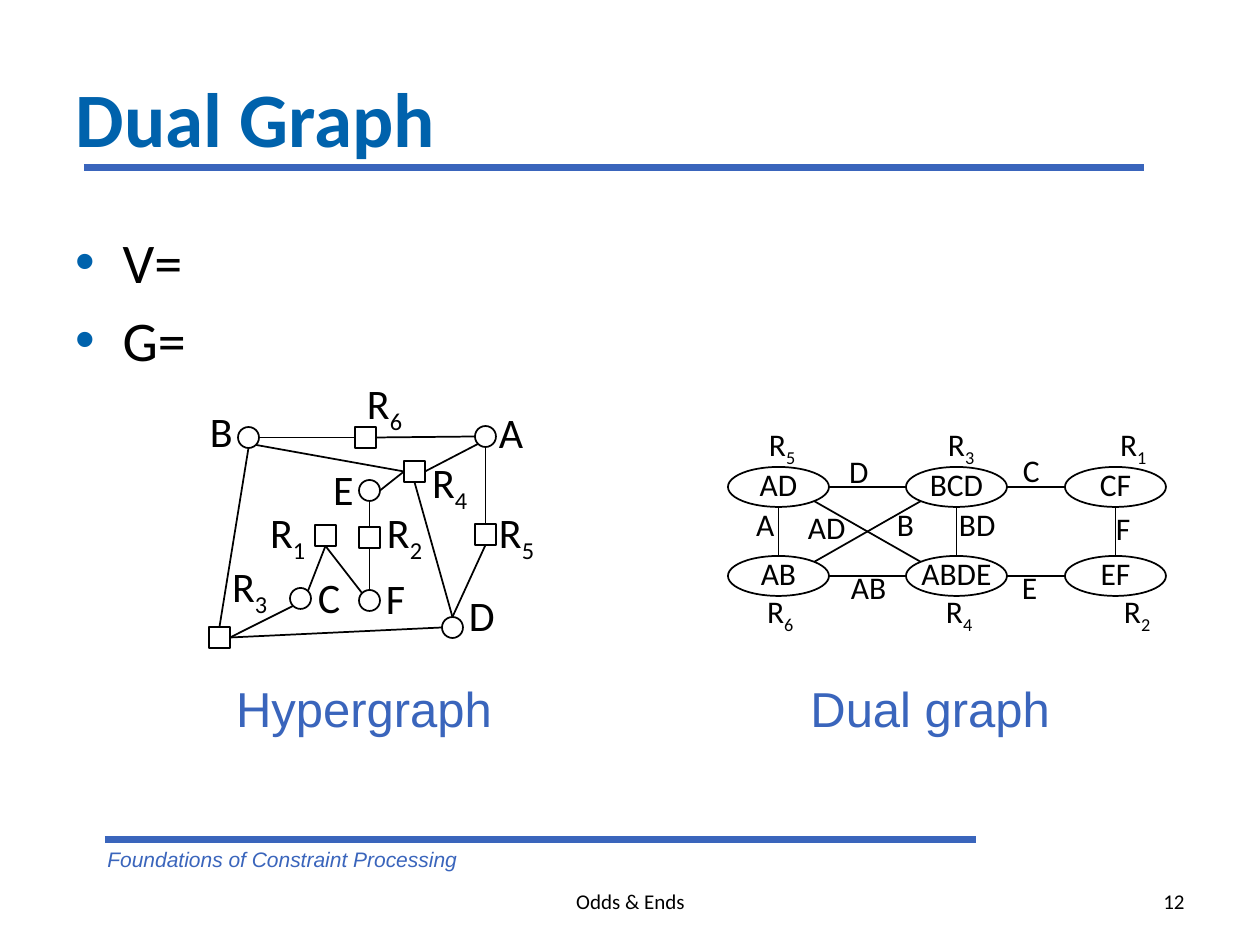
from lxml import etree
from pptx import Presentation
from pptx.dml.color import RGBColor
from pptx.enum.shapes import MSO_CONNECTOR, MSO_SHAPE
from pptx.enum.text import MSO_ANCHOR, MSO_AUTO_SIZE, PP_ALIGN
from pptx.oxml.ns import qn
from pptx.util import Emu, Pt

OVAL, RECT = MSO_SHAPE.OVAL, MSO_SHAPE.RECTANGLE
STRAIGHT = MSO_CONNECTOR.STRAIGHT
LEFT, CENTER, RIGHT = PP_ALIGN.LEFT, PP_ALIGN.CENTER, PP_ALIGN.RIGHT
TOP, MIDDLE = MSO_ANCHOR.TOP, MSO_ANCHOR.MIDDLE
PX = 914400 / 126
COLORS = {"title": "0062AC", "accent": "3A65BC", "ink": "000000", "paper": "FFFFFF"}

TITLE = ("Dual Graph", (63, 38, 1134, 158))
BULLETS = (["V=", "G="], (63, 221, 1134, 624))
RULES = [((84, 168), (1144, 168)), ((105, 840), (976, 840))]
# text, box, alignment, anchor, font
CAPTIONS = [
    ("Foundations of Constraint Processing", (95, 840, 661, 38), LEFT, TOP,
     {"size": Pt(12), "name": "Arial", "color": "accent", "italic": True}),
    ("Odds & Ends", (431, 876, 399, 50), CENTER, MIDDLE, {"size": Pt(12)}),
    ("12", (903, 876, 294, 50), RIGHT, MIDDLE, {"size": Pt(12)}),
    ("Hypergraph", (136, 672, 456, 72), CENTER, TOP,
     {"size": Pt(28), "name": "Arial", "color": "accent"}),
    ("Dual graph", (798, 672, 421, 72), LEFT, TOP,
     {"size": Pt(28), "name": "Arial", "color": "accent"}),
]

# Hypergraph: node -> (node corner, label corner); relations R1 to R6 are squares
NODE = 21
HYPER_NODES = {
    "A": ((475, 426), (499, 407)), "B": ((238, 427), (210, 406)),
    "C": ((290, 588), (318, 572)), "D": ((442, 617), (469, 590)),
    "E": ((359, 480), (333, 464)), "F": ((359, 590), (386, 573)),
    "R1": ((315, 525), (270, 507)), "R2": ((359, 527), (387, 507)),
    "R3": ((209, 627), (232, 561)), "R4": ((404, 461), (432, 457)),
    "R5": ((475, 524), (499, 507)), "R6": ((355, 427), (367, 378)),
}
HYPER_EDGES = [
    ("R6", "left", "B", "right"), ("R6", "right", "A", "left"),
    ("R4", "left", "B", "bottom right"), ("R4", "right", "A", "bottom left"),
    ("R4", "left", "E", "right"), ("R4", "bottom", "D", "top"),
    ("R5", "top", "A", "bottom"), ("R5", "bottom", "D", "top"),
    ("R3", "top", "B", "bottom"), ("R3", "right", "C", "bottom left"),
    ("R3", "right", "D", "left"), ("R1", "bottom", "C", "top right"),
    ("R1", "bottom", "F", "top left"), ("R2", "bottom", "F", "top"),
    ("R2", "top", "E", "bottom"),
]

# Dual graph: scopes on a grid, relation names around it, shared variables on edges
DUAL_GRID = [["AD", "BCD", "CF"], ["AB", "ABDE", "EF"]]
DUAL_COLUMNS, DUAL_ROWS, DUAL_SIZE = (728, 906, 1065), (467, 556), (101, 40)
DUAL_EDGES = [
    ("AD", "right", "BCD", "left"), ("BCD", "right", "CF", "left"),
    ("AB", "right", "ABDE", "left"), ("ABDE", "right", "EF", "left"),
    ("AD", "bottom", "AB", "top"), ("BCD", "bottom", "ABDE", "top"),
    ("CF", "bottom", "EF", "top"), ("AB", "top right", "BCD", "bottom left"),
    ("AD", "bottom right", "ABDE", "top left"),
]
DUAL_LABELS = [
    ("R5", 769, 425), ("R3", 948, 425), ("R1", 1120, 425),
    ("R6", 767, 592), ("R4", 946, 592), ("R2", 1124, 592),
    ("D", 849, 452), ("C", 1023, 451), ("A", 756, 505), ("AD", 808, 508),
    ("B", 897, 505), ("BD", 959, 505), ("F", 1116, 509), ("AB", 851, 568), ("E", 1022, 568),
]

SIDES = {"top": (0, -1), "left": (-1, 0), "bottom": (0, 1), "right": (1, 0)}
SITES = list(SIDES)


def px(*lengths):
    return [Emu(round(length * PX)) for length in lengths]


def rgb(name):
    return RGBColor.from_string(COLORS[name])


def set_font(font, **values):
    values = {"name": "Calibri", "color": "ink", **values}
    font.color.rgb = rgb(values.pop("color"))
    for key, value in values.items():
        setattr(font, key, value)


def format_frame(frame, **values):
    for key, value in {"word_wrap": True, "auto_size": MSO_AUTO_SIZE.NONE, **values}.items():
        setattr(frame, key, value)


def add_text(shapes, text, box, align=LEFT, anchor=TOP, font=None, **frame_values):
    frame = shapes.add_textbox(*px(*box)).text_frame
    format_frame(frame, vertical_anchor=anchor, **frame_values)
    paragraph = frame.paragraphs[0]
    paragraph.alignment = align
    set_font(paragraph.font, **(font or {}))
    run = paragraph.add_run()
    run.text = text
    set_font(run.font, **(font or {}))
    return paragraph


def add_label(shapes, text, corner, size):
    """Add a margin-free label; the digit of a relation name is a subscript."""
    font = {"size": Pt(size)}
    paragraph = add_text(shapes, text[0], (*corner, 56, size * 2.1), font=font,
                         margin_left=0, margin_top=0, margin_right=0, margin_bottom=0)
    if text[1:]:
        run = paragraph.add_run()
        run.text = text[1:]
        set_font(run.font, **font)
        if text[1:].isdigit():
            run.font._element.set("baseline", "-25000")


def add_node(shapes, kind, box):
    node = shapes.add_shape(kind, *px(*box))
    node.shadow.inherit = False
    node.fill.solid()
    node.fill.fore_color.rgb = rgb("paper")
    node.line.color.rgb = rgb("ink")
    node.line.width = Pt(1)
    return node


def add_line(shapes, start, end, color, width):
    """Add a straight line between two points in EMU."""
    line = shapes.add_connector(STRAIGHT, *start, *end)
    line.line.color.rgb = rgb(color)
    line.line.width = Pt(width)
    etree.SubElement(line._element.spPr, qn("a:effectLst"))
    return line


def rim_point(node, side):
    """Point on the rim of a node; a side of two words is a diagonal."""
    steps = [SIDES[word] for word in side.split()]
    reach = 0.5 if len(steps) == 1 else 0.5 ** 1.5
    return (Emu(round(node.left + node.width * (0.5 + reach * sum(s[0] for s in steps)))),
            Emu(round(node.top + node.height * (0.5 + reach * sum(s[1] for s in steps)))))


def add_edges(shapes, nodes, edges):
    for first, first_side, second, second_side in edges:
        start, end = nodes[first], nodes[second]
        edge = add_line(shapes, rim_point(start, first_side),
                        rim_point(end, second_side), "ink", 1)
        if start.auto_shape_type == RECT:
            edge.begin_connect(start, SITES.index(first_side))


def add_hypergraph(shapes):
    nodes = {}
    for name, (corner, label_corner) in HYPER_NODES.items():
        kind = RECT if name.startswith("R") else OVAL
        nodes[name] = add_node(shapes, kind, (*corner, NODE, NODE))
        add_label(shapes, name, label_corner, 24)
    add_edges(shapes, nodes, HYPER_EDGES)


def add_dual_graph(shapes):
    nodes = {}
    for y, scopes in zip(DUAL_ROWS, DUAL_GRID):
        for x, scope in zip(DUAL_COLUMNS, scopes):
            node = nodes[scope] = add_node(shapes, OVAL, (x, y, *DUAL_SIZE))
            format_frame(node.text_frame, word_wrap=False, vertical_anchor=MIDDLE, margin_left=0,
                         margin_top=0, margin_right=0, margin_bottom=px(6)[0])
            node.text_frame.text = scope
            paragraph = node.text_frame.paragraphs[0]
            paragraph.alignment = CENTER
            set_font(paragraph.runs[0].font, size=Pt(18))
    add_edges(shapes, nodes, DUAL_EDGES)
    for text, *corner in DUAL_LABELS:
        add_label(shapes, text, corner, 18)


def add_bullets(shapes, items, box):
    frame = shapes.add_textbox(*px(*box)).text_frame
    format_frame(frame)
    for index, item in enumerate(items):
        paragraph = frame.add_paragraph() if index else frame.paragraphs[0]
        props = paragraph._p.get_or_add_pPr()
        props.set("marL", "342900")
        props.set("indent", "-342900")
        if index:
            paragraph.space_before = Pt(6.4)
        color = etree.SubElement(props, qn("a:buClr"))
        etree.SubElement(color, qn("a:srgbClr"), val=COLORS["title"])
        etree.SubElement(props, qn("a:buFont"), typeface="Arial")
        etree.SubElement(props, qn("a:buChar"), char="•")
        run = paragraph.add_run()
        run.text = item
        set_font(run.font, size=Pt(32))


def main():
    deck = Presentation()
    deck.slide_width, deck.slide_height = px(1260, 945)
    slide = deck.slides.add_slide(deck.slide_layouts[5])
    shapes = slide.shapes
    title = shapes.title
    text, box = TITLE
    title.left, title.top, title.width, title.height = px(*box)
    title.text_frame.text = text
    format_frame(title.text_frame, vertical_anchor=MIDDLE)
    heading = title.text_frame.paragraphs[0]
    heading.alignment = LEFT
    set_font(heading.runs[0].font, size=Pt(44), bold=True, color="title")

    for start, end in RULES:
        add_line(shapes, px(*start), px(*end), "accent", 4)
    add_bullets(shapes, *BULLETS)
    for caption in CAPTIONS:
        add_text(shapes, *caption)
    add_dual_graph(shapes.add_group_shape().shapes)
    add_hypergraph(shapes.add_group_shape().shapes)
    deck.save("out.pptx")


if __name__ == "__main__":
    main()
